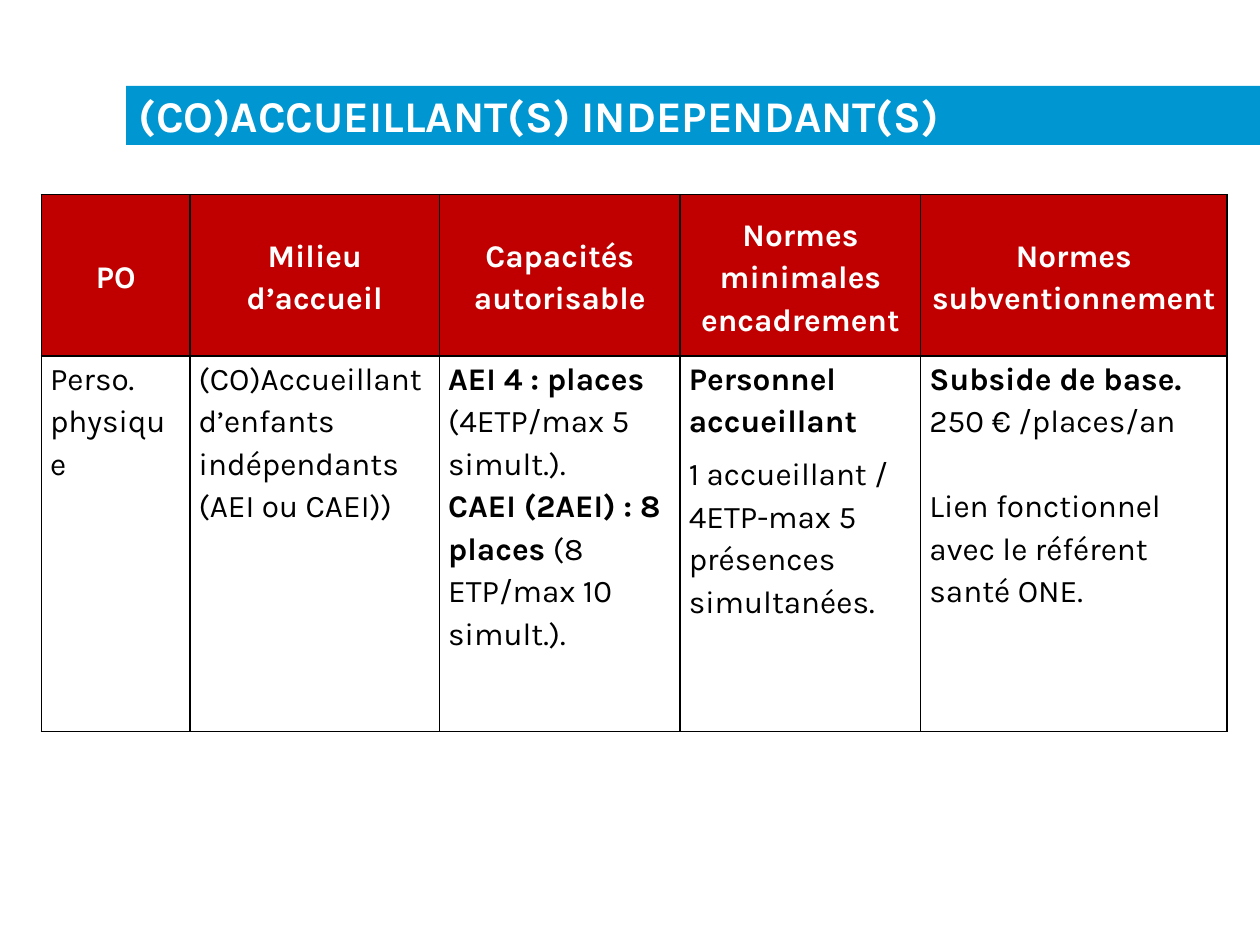
from lxml import etree
from pptx import Presentation
from pptx.dml.color import RGBColor
from pptx.enum import text
from pptx.oxml import ns
from pptx.util import Pt

COLORS = {"bar": "0096D2", "header": "C00000", "light": "FFFFFF", "dark": "000000"}
FONT = "Karla"
BODY_SIZE = 18
LINE_GAP = 24.2

COLUMN_WIDTHS = [84.96, 142.56, 137.52, 137.52, 174.96]
ROW_HEIGHTS = [92.16, 214.56]
HEADERS = [
    ["PO"],
    ["Milieu d’accueil"],
    ["Capacités autorisable"],
    ["Normes minimales", "encadrement"],
    ["Normes subventionnement"],
]
# Each cell is a list of paragraphs: (space before, [(words, bold), ...])
DETAILS = [
    [(0, [("Perso. physique", False)])],
    [(0, [("(CO)Accueillant d’enfants indépendants (AEI ou CAEI))", False)])],
    [
        (0, [("AEI 4 : places", True), (" (4ETP/max 5 simult.).", False)]),
        (0, [("CAEI (2AEI) : 8 places", True), (" (8 ETP/max 10 simult.).", False)]),
    ],
    [
        (0, [("Personnel accueillant", True)]),
        (6, [("1 accueillant / 4ETP-max 5 présences simultanées.", False)]),
    ],
    [
        (0, [("Subside de base.", True)]),
        (0, [("250 € /places/an", False)]),
        (LINE_GAP, [("Lien fonctionnel avec le référent santé ONE.", False)]),
    ],
]


def color(name):
    return RGBColor.from_string(COLORS[name])


def add_span(para, words, size, ink, bold):
    span = para.add_run()
    span.text = words
    span.font.name = FONT
    span.font.size = Pt(size)
    span.font.bold = bold
    span.font.color.rgb = color(ink)


def place_title(page, left, top, width, height):
    box = page.shapes.title
    box.left, box.top, box.width, box.height = map(Pt, (left, top, width, height))
    box.fill.solid()
    box.fill.fore_color.rgb = color("bar")
    frame = box.text_frame
    frame.word_wrap = True
    frame.auto_size = text.MSO_AUTO_SIZE.NONE
    frame.vertical_anchor = text.MSO_ANCHOR.MIDDLE
    para = frame.paragraphs[0]
    para.alignment = text.PP_ALIGN.LEFT
    add_span(para, "(CO)ACCUEILLANT(S) INDEPENDANT(S)", 25, "light", True)


def add_borders(cell):
    """Draw a thin dark line on all four sides, ahead of the cell's fill."""
    props = cell._tc.get_or_add_tcPr()
    for index, side in enumerate(("lnL", "lnR", "lnT", "lnB")):
        line = etree.Element(ns.qn(f"a:{side}"), w=str(Pt(1)))
        fill = etree.SubElement(line, ns.qn("a:solidFill"))
        etree.SubElement(fill, ns.qn("a:srgbClr"), val=COLORS["dark"])
        props.insert(index, line)


def fill_cell(cell, paragraphs, ink, align, anchor):
    cell.margin_left = cell.margin_right = Pt(5)
    cell.margin_top = cell.margin_bottom = Pt(0)
    cell.vertical_anchor = anchor
    frame = cell.text_frame
    for index, (gap, spans) in enumerate(paragraphs):
        para = frame.add_paragraph() if index else frame.paragraphs[0]
        para.alignment = align
        para.line_spacing = 1.15
        para.space_before = Pt(gap)
        for words, bold in spans:
            add_span(para, words, BODY_SIZE, ink, bold)
    add_borders(cell)


def place_table(page, left, top):
    table = page.shapes.add_table(
        len(ROW_HEIGHTS), len(COLUMN_WIDTHS), Pt(left), Pt(top),
        Pt(sum(COLUMN_WIDTHS)), Pt(sum(ROW_HEIGHTS)),
    ).table
    table.horz_banding = False
    for row, height in zip(table.rows, ROW_HEIGHTS):
        row.height = Pt(height)
    for index, width in enumerate(COLUMN_WIDTHS):
        table.columns[index].width = Pt(width)
        header, detail = table.cell(0, index), table.cell(1, index)
        header.fill.solid()
        header.fill.fore_color.rgb = color("header")
        detail.fill.background()
        titles = [(0, [(words, True)]) for words in HEADERS[index]]
        fill_cell(header, titles, "light", text.PP_ALIGN.CENTER, text.MSO_ANCHOR.MIDDLE)
        fill_cell(detail, DETAILS[index], "dark", text.PP_ALIGN.LEFT, text.MSO_ANCHOR.TOP)


def main():
    deck = Presentation()
    deck.slide_width, deck.slide_height = Pt(720), Pt(540)
    page = deck.slides.add_slide(deck.slide_layouts[5])
    place_title(page, 72, 49, 648, 33.84)
    place_table(page, 23.6, 111.3)
    deck.save("out.pptx")


if __name__ == "__main__":
    main()
